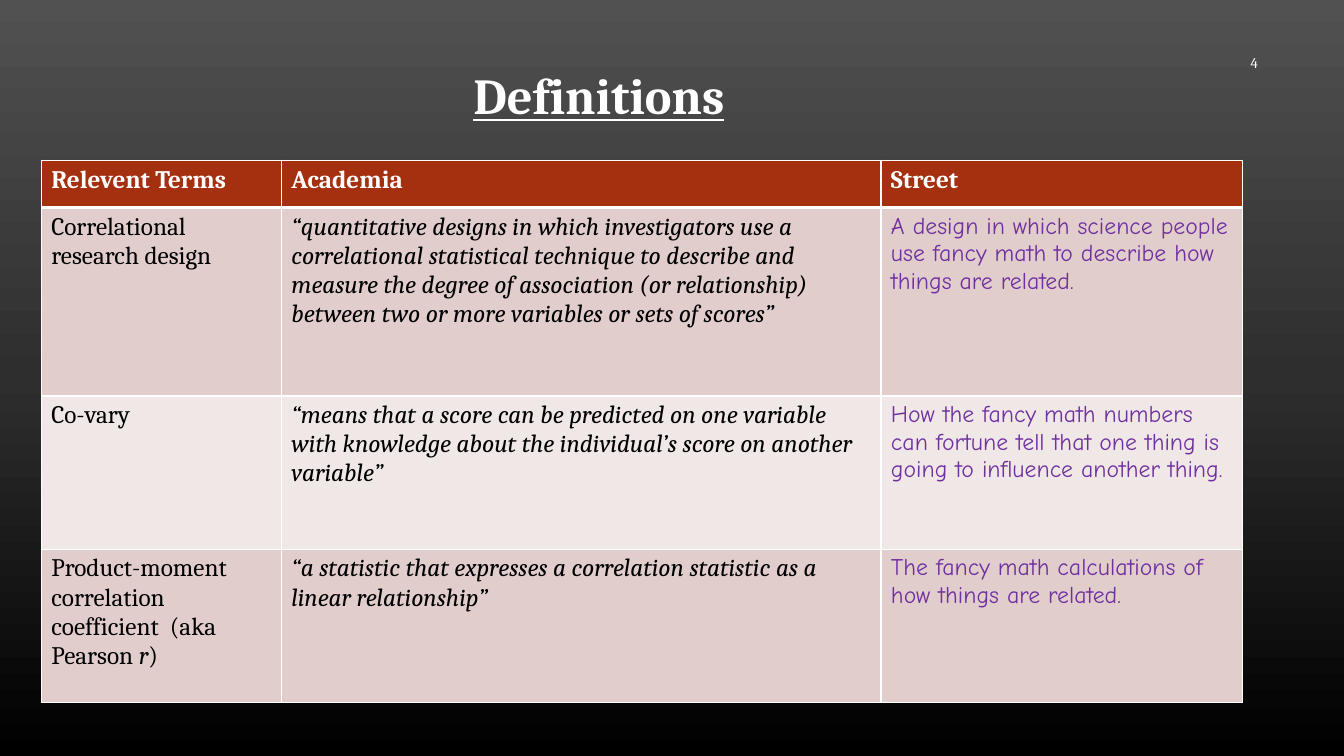
from copy import deepcopy

from lxml.etree import SubElement
from pptx import Presentation
from pptx.dml.color import RGBColor
from pptx.enum.text import MSO_ANCHOR as Anchor, MSO_AUTO_SIZE as Fit, PP_ALIGN as Align
from pptx.oxml.ns import qn
from pptx.util import Cm, Pt

WHITE = RGBColor(0xFF, 0xFF, 0xFF)
BLACK = RGBColor(0, 0, 0)
RUST = RGBColor(0xA5, 0x30, 0x0F)
ROSE = RGBColor(0xE1, 0xCD, 0xCC)
PALE = RGBColor(0xF0, 0xE8, 0xE7)
PURPLE = RGBColor(0x70, 0x30, 0xA0)
SHADES = [(0, RGBColor(0x51, 0x51, 0x51)), (0.5, RGBColor(0x2E, 0x2E, 0x2E)), (1, BLACK)]

SERIF = "Cambria"
COMIC = "Comic Neue"

HEADS = ["Relevent Terms", "Academia", "Street"]
TERMS = [
    ("Correlational research design",
     "“quantitative designs in which investigators use a correlational statistical "
     "technique to describe and measure the degree of association (or relationship) "
     "between two or more variables or sets of scores”",
     "A design in which science people use fancy math to describe how things are related."),
    ("Co-vary",
     "“means that a score can be predicted on one variable with knowledge about the "
     "individual’s score on another variable”",
     "How the fancy math numbers can fortune tell that one thing is going to influence "
     "another thing."),
    (("Product-moment correlation coefficient  (aka Pearson ", "r", ")"),
     "“a statistic that expresses a correlation statistic as a linear relationship”",
     "The fancy math calculations of how things are related."),
]
WIDTHS = [6.05, 15.11, 9.12]
HEIGHTS = [1.19, 4.75, 3.86, 3.86]
STYLES = [dict(), dict(italic=True), dict(size=17, name=COMIC, color=PURPLE)]


def write(frame, text, size=18, name=SERIF, color=BLACK, bold=False, italic=False,
          line=False, align=None):
    """Fill the first paragraph; in a tuple of parts every second one is italic."""
    para = frame.paragraphs[0]
    para.alignment = align
    parts = (text,) if isinstance(text, str) else text
    for i, part in enumerate(parts):
        run = para.add_run()
        run.text = part
        font = run.font
        font.size, font.name = Pt(size), name
        font.bold, font.underline = bold, line
        font.italic = italic or i % 2 == 1
        font.color.rgb = color


def add_box(slide, left, top, width, height):
    box = slide.shapes.add_textbox(Cm(left), Cm(top), Cm(width), Cm(height))
    return box.text_frame


def shade(slide):
    """Give the background its gradient from top to bottom."""
    fill = slide.background.fill
    fill.gradient()
    fill.gradient_angle = 270
    stops = next(slide.element.iter(qn("a:gsLst")))
    stops.append(deepcopy(stops[0]))
    for stop, (place, color) in zip(fill.gradient_stops, SHADES):
        stop.position = place
        stop.color.rgb = color


def edge(cell, top, bottom):
    """Draw white borders, with the widths of top and bottom in points."""
    props = cell._tc.get_or_add_tcPr()
    sides = {"L": 1, "R": 1, "T": top, "B": bottom}
    for i, (side, width) in enumerate(sides.items()):
        line = SubElement(props, qn("a:ln" + side), w=str(Pt(width)))
        fill = SubElement(line, qn("a:solidFill"))
        SubElement(fill, qn("a:srgbClr"), val=str(WHITE))
        props.insert(i, line)


def add_grid(slide):
    frame = slide.shapes.add_table(len(HEIGHTS), len(WIDTHS), Cm(1.04), Cm(4.04),
                                   Cm(sum(WIDTHS)), Cm(sum(HEIGHTS)))
    table = frame.table
    table.first_row = table.horz_banding = False
    for col, width in zip(table.columns, WIDTHS):
        col.width = Cm(width)
    for row, height in zip(table.rows, HEIGHTS):
        row.height = Cm(height)
    for r, texts in enumerate([HEADS, *TERMS]):
        for c, text in enumerate(texts):
            cell = table.cell(r, c)
            cell.fill.solid()
            cell.fill.fore_color.rgb = RUST if r == 0 else ROSE if r % 2 else PALE
            edge(cell, top=3 if r == 1 else 1, bottom=3 if r == 0 else 1)
            style = STYLES[c] if r else dict(color=WHITE, bold=True)
            write(cell.text_frame, text, **style)


def main():
    deck = Presentation()
    deck.slide_width, deck.slide_height = Cm(33.87), Cm(19.05)
    slide = deck.slides.add_slide(deck.slide_layouts[6])
    shade(slide)

    number = add_box(slide, 24.33, 1.07, 7.62, 1.02)
    number.word_wrap = True
    number.vertical_anchor = Anchor.MIDDLE
    write(number, "4", size=10.5, color=WHITE, align=Align.RIGHT)

    title = add_box(slide, 11.68, 1.5, 7.98, 1.8)
    title.word_wrap = False
    title.auto_size = Fit.SHAPE_TO_FIT_TEXT
    write(title, "Definitions", size=36, color=WHITE, bold=True, line=True)

    add_grid(slide)
    deck.save("out.pptx")


if __name__ == "__main__":
    main()
